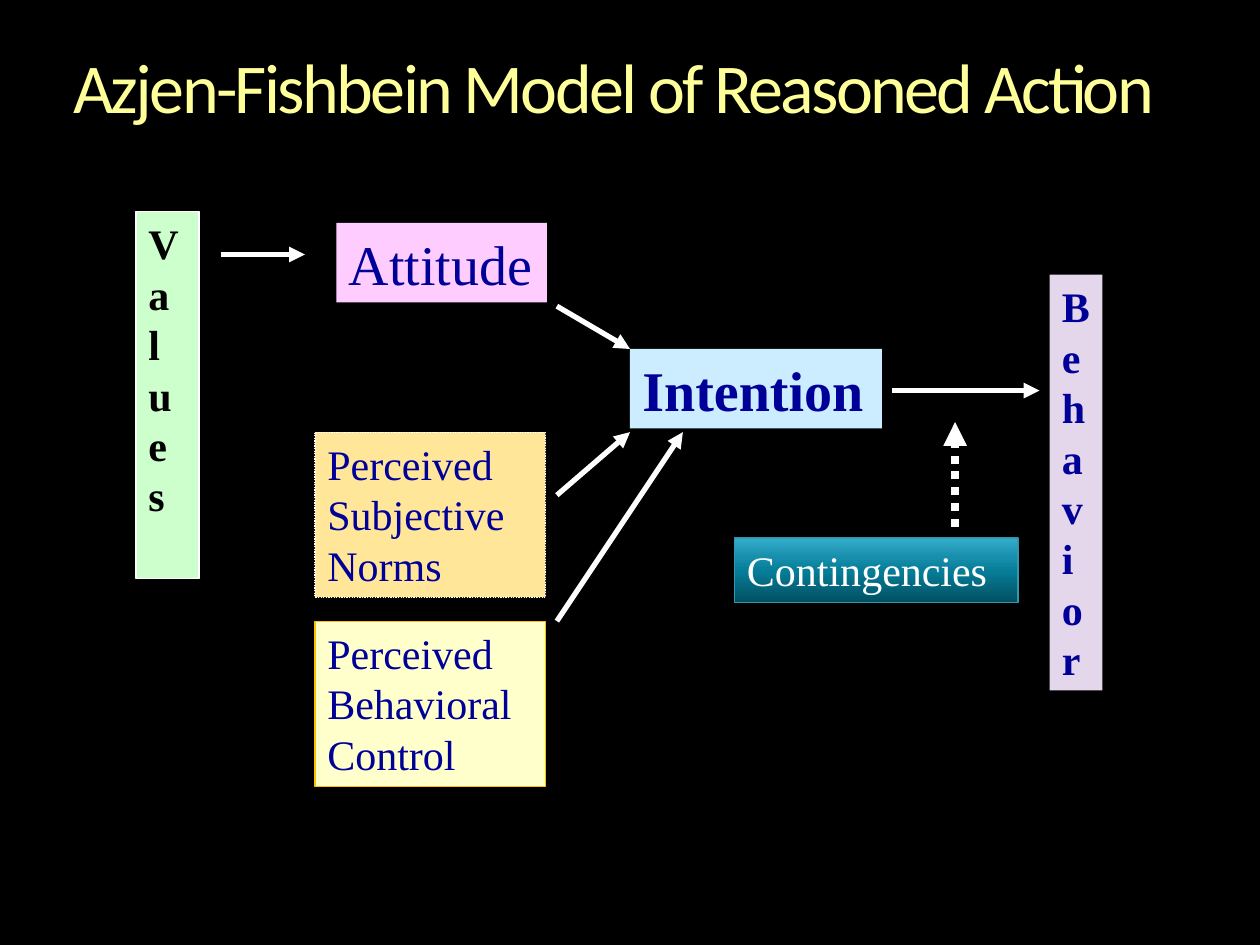
import pptx
import pptx.util
import pptx.dml.color
import pptx.enum.dml
import pptx.enum.shapes
import pptx.enum.text
import pptx.oxml
import pptx.oxml.ns

Inches = pptx.util.Inches
Pt = pptx.util.Pt
RGBColor = pptx.dml.color.RGBColor
DASH = pptx.enum.dml.MSO_LINE
qn = pptx.oxml.ns.qn

BLACK = RGBColor(0x00, 0x00, 0x00)
WHITE = RGBColor(0xFF, 0xFF, 0xFF)
TITLE_YELLOW = RGBColor(0xFF, 0xFF, 0x99)
NAVY = RGBColor(0x00, 0x00, 0x99)
PINK = RGBColor(0xFF, 0xCC, 0xFF)
GREEN = RGBColor(0xCC, 0xFF, 0xCC)
SKY = RGBColor(0xCC, 0xEC, 0xFF)
SAND = RGBColor(0xFF, 0xE6, 0x99)
CREAM = RGBColor(0xFF, 0xFF, 0xCC)
GOLD = RGBColor(0xFF, 0xC0, 0x00)
LILAC = RGBColor(0xE4, 0xD7, 0xEB)
TEAL = RGBColor(0x07, 0x7E, 0x99)
TEAL_EDGE = RGBColor(0x34, 0x97, 0xAE)
TEAL_STOPS = [
    (0, RGBColor(0x01, 0x50, 0x62)),
    (50, TEAL),
    (70, RGBColor(0x17, 0x8E, 0xAB)),
    (100, RGBColor(0x35, 0xAD, 0xCE)),
]


def write_text(shape, text, size=24, color=NAVY, bold=False,
               font="Times New Roman", margins=(0.1, 0.05), spacing=None):
    """Fill a shape with left-aligned text, one paragraph per line."""
    frame = shape.text_frame
    frame.word_wrap = True
    frame.vertical_anchor = pptx.enum.text.MSO_ANCHOR.TOP
    frame.margin_left = frame.margin_right = Inches(margins[0])
    frame.margin_top = frame.margin_bottom = Inches(margins[1])
    frame.text = text
    for paragraph in frame.paragraphs:
        paragraph.alignment = pptx.enum.text.PP_ALIGN.LEFT
        paragraph.line_spacing = spacing
        for run in paragraph.runs:
            run.font.name = font
            run.font.size = Pt(size)
            run.font.bold = bold
            run.font.color.rgb = color


presentation = pptx.Presentation()
presentation.slide_width = Inches(10)
presentation.slide_height = Inches(7.5)
slide = presentation.slides.add_slide(presentation.slide_layouts[6])
slide.background.fill.solid()
slide.background.fill.fore_color.rgb = BLACK

# Title
title = slide.shapes.add_textbox(Inches(0.58), Inches(0.42), Inches(9.17), Inches(0.92))
write_text(title, "Azjen-Fishbein Model of Reasoned Action", size=40,
           color=TITLE_YELLOW, font="Calibri", margins=(0, 0), spacing=0.9)
title.text_frame.paragraphs[0].runs[0].font._element.set("spc", "-150")

# Concept boxes: text, (left, top, width, height), fill, outline, dash, text format
boxes = [
    ("Attitude", (2.67, 1.77, 1.67, 0.63), PINK, None, None, {"size": 32}),
    ("\n".join("Values"), (1.08, 1.68, 0.5, 2.91), GREEN, WHITE, None,
     {"color": BLACK, "bold": True}),
    ("Intention", (5, 2.77, 2, 0.63), SKY, None, None, {"size": 32, "bold": True}),
    ("Perceived Subjective Norms", (2.5, 3.43, 1.83, 1.31), SAND, WHITE,
     DASH.ROUND_DOT, {}),
    ("Perceived Behavioral Control", (2.5, 4.93, 1.83, 1.31), CREAM, GOLD, None, {}),
    ("Behavior", (8.33, 2.18, 0.42, 3.3), LILAC, None, None, {"bold": True}),
    ("Contingencies", (5.83, 4.27, 2.25, 0.51), TEAL, TEAL_EDGE, None,
     {"color": WHITE}),
]
for text, place, fill, outline, dash, text_format in boxes:
    box = slide.shapes.add_shape(pptx.enum.shapes.MSO_SHAPE.RECTANGLE,
                                 *[Inches(value) for value in place])
    box.shadow.inherit = False
    if fill == TEAL:
        # Four-stop gradient, dark at the bottom
        box.fill.gradient()
        box.fill.gradient_angle = 90
        stop_list = box._element.spPr.find(qn("a:gradFill")).find(qn("a:gsLst"))
        for stop in list(stop_list):
            stop_list.remove(stop)
        for position, color in TEAL_STOPS:
            stop = stop_list.makeelement(qn("a:gs"), {"pos": str(position * 1000)})
            stop.append(stop.makeelement(qn("a:srgbClr"), {"val": str(color)}))
            stop_list.append(stop)
    else:
        box.fill.solid()
        box.fill.fore_color.rgb = fill
    if outline is None:
        box.line.fill.background()
    else:
        box.line.color.rgb = outline
        box.line.width = Pt(0.75)
        if dash is not None:
            box.line.dash_style = dash
    write_text(box, text, **text_format)

# Arrows: start, end, line width, dash
arrows = [
    ((1.75, 2.02), (2.42, 2.02), 3, None),
    ((4.42, 2.43), (5, 2.77), 3, None),
    ((4.42, 3.93), (5, 3.43), 3, None),
    ((4.42, 4.93), (5.42, 3.43), 3, None),
    ((7.08, 3.1), (8.25, 3.1), 3, None),
    ((7.58, 4.18), (7.58, 3.35), 4.5, DASH.ROUND_DOT),
]
for start, end, width, dash in arrows:
    arrow = slide.shapes.add_connector(
        pptx.enum.shapes.MSO_CONNECTOR.STRAIGHT,
        *[Inches(value) for value in start + end])
    arrow.line.color.rgb = WHITE
    arrow.line.width = Pt(width)
    if dash is not None:
        arrow.line.dash_style = dash
    properties = arrow._element.spPr
    line = properties.find(qn("a:ln"))
    line.append(line.makeelement(qn("a:tailEnd"), {"type": "triangle"}))
    properties.append(properties.makeelement(qn("a:effectLst"), {}))

presentation.save("out.pptx")
